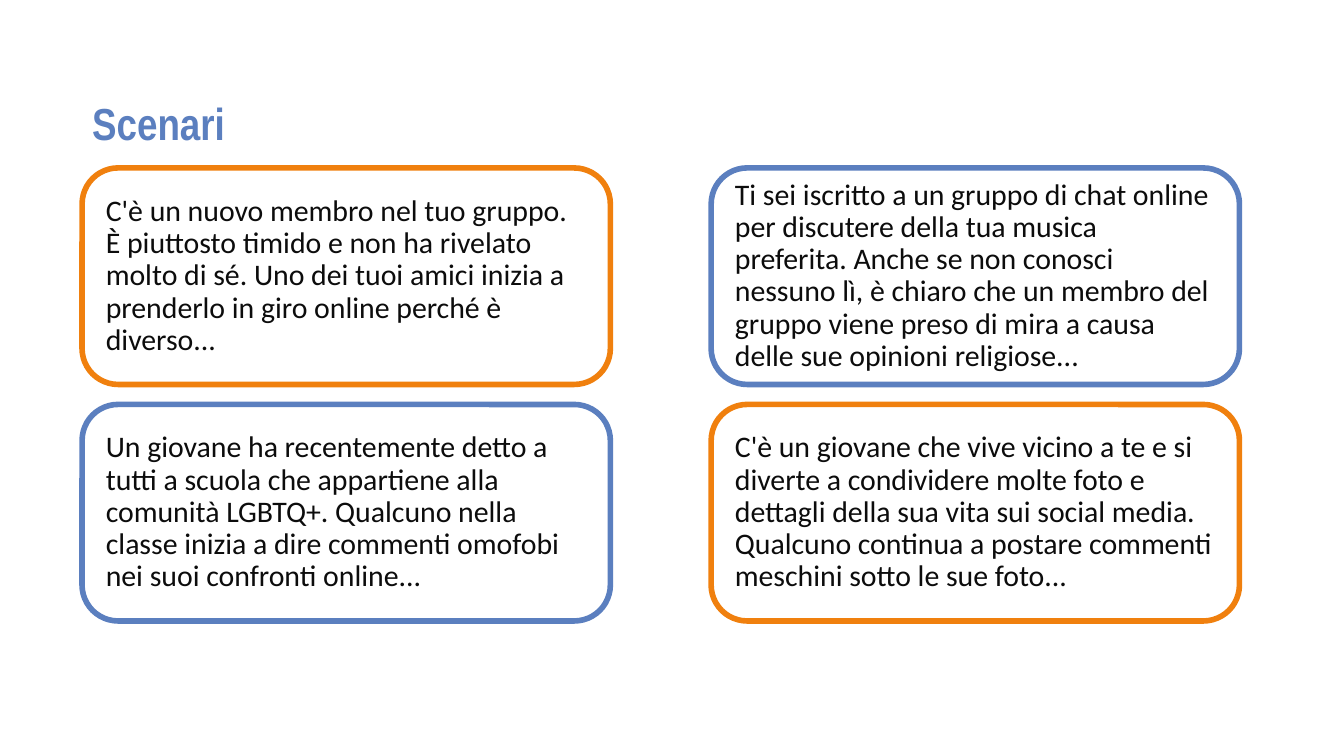
import pptx
import pptx.dml.color
import pptx.enum.shapes
import pptx.enum.text
import pptx.util

Pt = pptx.util.Pt
BLUE, ORANGE, INK = "5B7FBF", "F0800E", "0C0C0C"
LEFT, TOP = 44, 90
CARD_W, CARD_H = 283, 116
COL_STEP, ROW_STEP = 337, 126.7

# Rows of cards, each card being its border colour and its text
SCENARIOS = [
    [
        (ORANGE, "C'è un nuovo membro nel tuo gruppo. È piuttosto timido e non ha "
                 "rivelato molto di sé. Uno dei tuoi amici inizia a prenderlo in giro "
                 "online perché è diverso..."),
        (BLUE, "Ti sei iscritto a un gruppo di chat online per discutere della tua "
               "musica preferita. Anche se non conosci nessuno lì, è chiaro che un "
               "membro del gruppo viene preso di mira a causa delle sue opinioni "
               "religiose..."),
    ],
    [
        (BLUE, "Un giovane ha recentemente detto a tutti a scuola che appartiene alla "
               "comunità LGBTQ+. Qualcuno nella classe inizia a dire commenti omofobi "
               "nei suoi confronti online..."),
        (ORANGE, "C'è un giovane che vive vicino a te e si diverte a condividere molte "
                 "foto e dettagli della sua vita sui social media. Qualcuno continua a "
                 "postare commenti meschini sotto le sue foto..."),
    ],
]


def rgb(hex_color):
    return pptx.dml.color.RGBColor.from_string(hex_color)


def write_text(sp, text, font, size, color, inset_x, inset_y, bold=False):
    """Fill a shape with one left-aligned, vertically centred paragraph."""
    tf = sp.text_frame
    tf.word_wrap = True
    tf.auto_size = pptx.enum.text.MSO_AUTO_SIZE.NONE
    tf.vertical_anchor = pptx.enum.text.MSO_ANCHOR.MIDDLE
    tf.margin_left = tf.margin_right = Pt(inset_x)
    tf.margin_top = tf.margin_bottom = Pt(inset_y)
    p = tf.paragraphs[0]
    p.alignment = pptx.enum.text.PP_ALIGN.LEFT
    p.line_spacing = 0.9
    p.space_before = Pt(0)
    r = p.add_run()
    r.text = text
    r.font.name = font
    r.font.size = Pt(size)
    r.font.bold = bold
    r.font.color.rgb = rgb(color)


def set_title(s, text):
    sp = s.shapes.title
    sp.left, sp.top, sp.width, sp.height = Pt(LEFT), Pt(26.6), Pt(238), Pt(81.4)
    write_text(sp, text, "Arial Narrow", 24, BLUE, 5.4, 2.7, bold=True)


def add_card(s, left, top, color, text):
    sp = s.shapes.add_shape(
        pptx.enum.shapes.MSO_SHAPE.ROUNDED_RECTANGLE,
        Pt(left), Pt(top), Pt(CARD_W), Pt(CARD_H))
    sp.adjustments[0] = 1 / 6
    sp.shadow.inherit = False
    sp.fill.background()
    sp.line.color.rgb = rgb(color)
    sp.line.width = Pt(3)
    write_text(sp, text, "Calibri", 16, INK, 7.2, 7.2)


def main():
    prs = pptx.Presentation()
    prs.slide_width, prs.slide_height = Pt(720), Pt(405)
    s = prs.slides.add_slide(prs.slide_layouts.get_by_name("Title Only"))
    set_title(s, "Scenari")
    for row, cards in enumerate(SCENARIOS):
        for col, (color, text) in enumerate(cards):
            add_card(s, LEFT + col * COL_STEP, TOP + row * ROW_STEP, color, text)
    prs.save("out.pptx")


if __name__ == "__main__":
    main()
